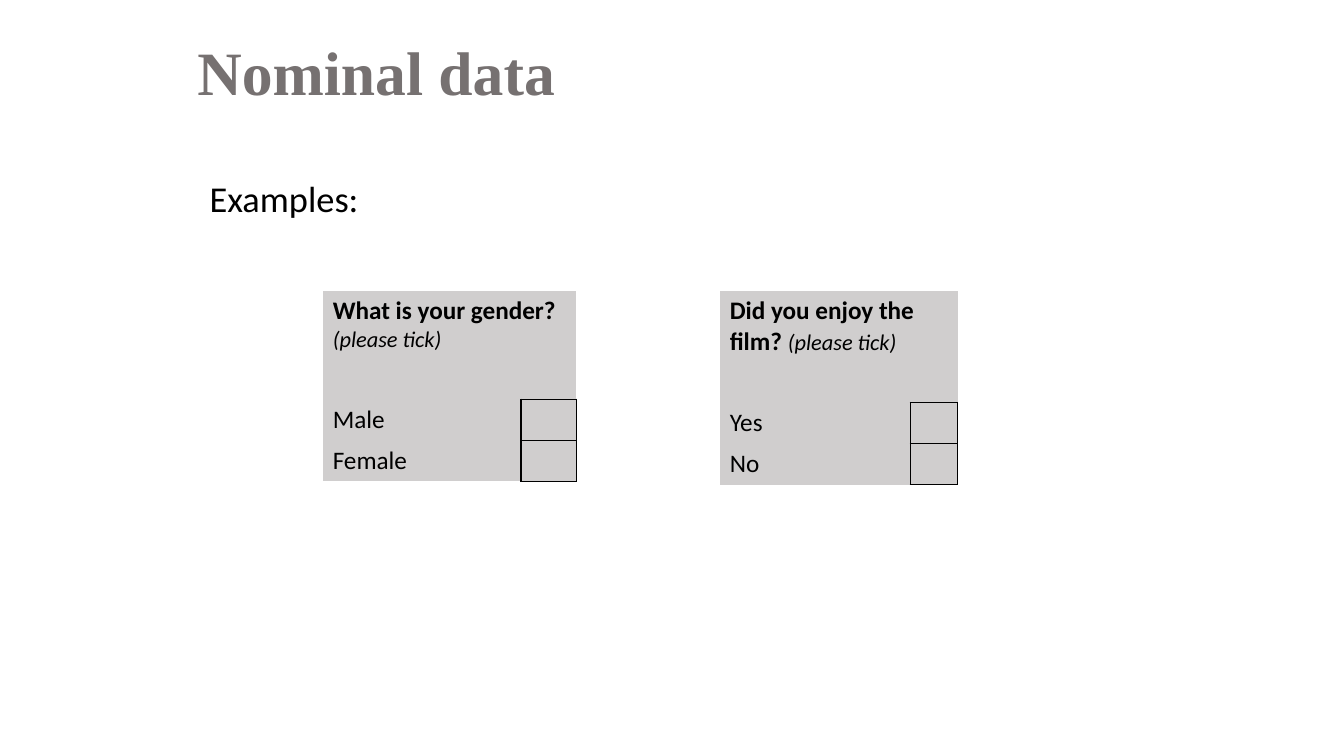
import pptx
import pptx.dml.color
import pptx.enum.text
import pptx.oxml
import pptx.oxml.ns
import pptx.util

Pt = pptx.util.Pt
BLACK = "000000"
PANEL_GREY = "D0CECE"
TITLE_GREY = "767171"
OPTION_HEIGHT = 29.4
TABLE_TOP = 207.7


def colour(hex_value):
    return pptx.dml.color.RGBColor.from_string(hex_value)


def style_font(font, size, name="Calibri", hex_value=BLACK, bold=False, italic=False):
    font.name = name
    font.size = Pt(size)
    font.color.rgb = colour(hex_value)
    font.bold = bold
    font.italic = italic


def add_text(slide, text, left, top, width, height):
    """Add a wrapping text box and return its frame and paragraph."""
    box = slide.shapes.add_textbox(Pt(left), Pt(top), Pt(width), Pt(height))
    frame = box.text_frame
    frame.word_wrap = True
    para = frame.paragraphs[0]
    para.text = text
    return frame, para


def set_borders(cell, black_sides):
    """Draw black lines on the named sides (L, R, T, B) and none on the others."""
    properties = cell._tc.get_or_add_tcPr()
    for index, side in enumerate("LRTB"):
        if side in black_sides:
            paint = f'<a:solidFill><a:srgbClr val="{BLACK}"/></a:solidFill>'
        else:
            paint = "<a:noFill/>"
        line = pptx.oxml.parse_xml(
            f'<a:ln{side} {pptx.oxml.ns.nsdecls("a")} w="{Pt(1)}">{paint}</a:ln{side}>'
        )
        properties.insert(index, line)


def add_question(slide, question, options, left, column_widths, question_height):
    """Add a question panel with one tick box for each option."""
    heights = [question_height] + [OPTION_HEIGHT] * (len(options) + 1)
    frame = slide.shapes.add_table(
        len(heights), 2, Pt(left), Pt(TABLE_TOP), Pt(sum(column_widths)), Pt(sum(heights))
    )
    table = frame.table
    table.first_row = False
    table.horz_banding = False
    for column, width in zip(table.columns, column_widths):
        column.width = Pt(width)
    for row, height in zip(table.rows, heights):
        row.height = Pt(height)

    borders = [("", ""), ("", "B")] + [("R", "LRTB")] * len(options)
    for row, row_borders in zip(table.rows, borders):
        for cell, sides in zip(row.cells, row_borders):
            cell.fill.solid()
            cell.fill.fore_color.rgb = colour(PANEL_GREY)
            set_borders(cell, sides)

    heading = table.cell(0, 0)
    heading.merge(table.cell(0, 1))
    para = heading.text_frame.paragraphs[0]
    question_span = para.add_run()
    question_span.text = question + " "
    style_font(question_span.font, 18, bold=True)
    hint_span = para.add_run()
    hint_span.text = "(please tick)"
    style_font(hint_span.font, 16, italic=True)

    for row_index, option in enumerate(options, start=2):
        para = table.cell(row_index, 0).text_frame.paragraphs[0]
        para.text = option
        style_font(para.font, 18)


def main():
    deck = pptx.Presentation()
    deck.slide_width = Pt(960)
    deck.slide_height = Pt(540)
    slide = deck.slides.add_slide(deck.slide_layouts[6])

    _, examples = add_text(slide, "Examples:", 142.6, 122.4, 680.4, 287.3)
    examples.space_before = Pt(6)
    examples.space_after = Pt(12)
    style_font(examples.font, 26)

    title_frame, title = add_text(slide, "Nominal data", 133.9, 9.4, 473, 82.8)
    title_frame.vertical_anchor = pptx.enum.text.MSO_ANCHOR.MIDDLE
    style_font(title.font, 44, "Times New Roman", TITLE_GREY, bold=True)

    add_question(slide, "What is your gender?", ["Male", "Female"], 230.5, [141.7, 39.6], 48)
    add_question(slide, "Did you enjoy the film?", ["Yes", "No"], 514.1, [136.1, 33.8], 50.4)
    deck.save("out.pptx")


if __name__ == "__main__":
    main()
